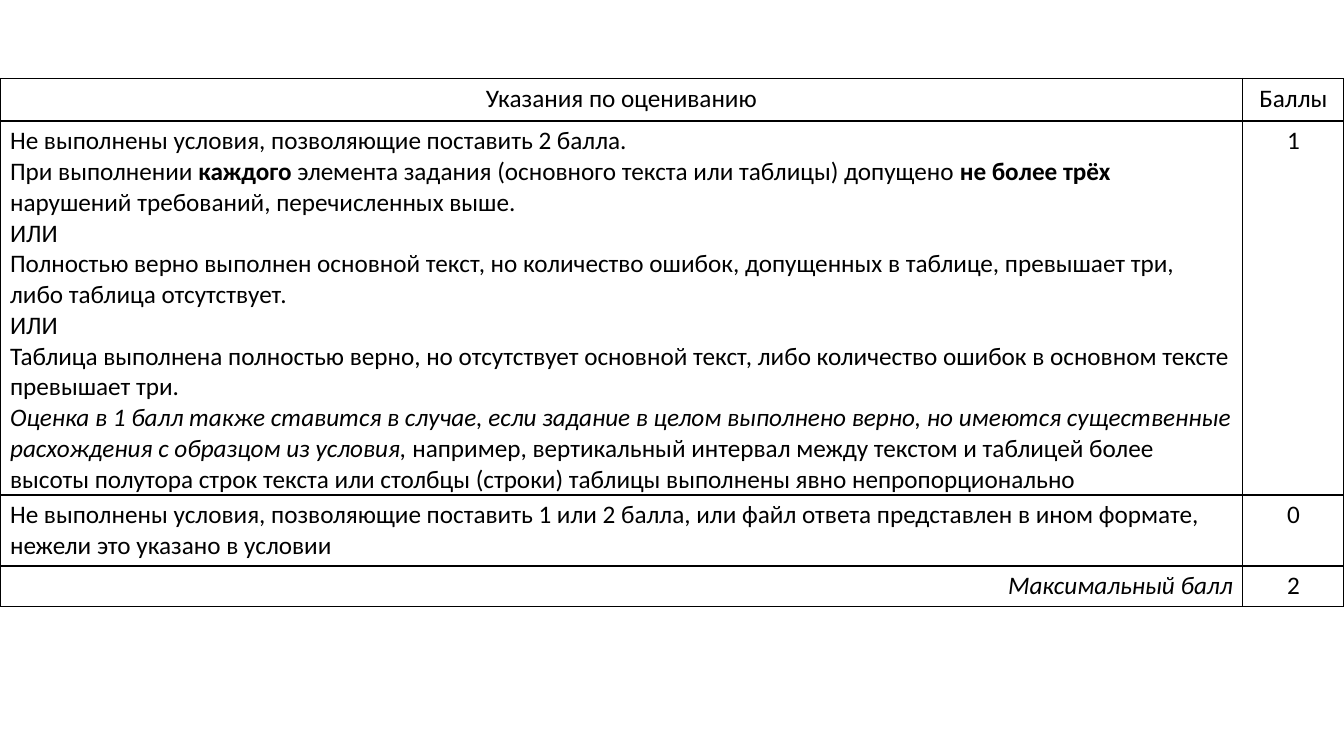
from lxml import etree
from pptx import Presentation
from pptx.dml.color import RGBColor
from pptx.enum.text import PP_ALIGN
from pptx.oxml.ns import qn
from pptx.util import Cm, Pt

LEFT, CENTER, RIGHT = PP_ALIGN.LEFT, PP_ALIGN.CENTER, PP_ALIGN.RIGHT
BLACK = "000000"


def color(value):
    return RGBColor.from_string(value)


def add_borders(cell):
    properties = cell._tc.get_or_add_tcPr()
    for position, side in enumerate(("a:lnL", "a:lnR", "a:lnT", "a:lnB")):
        line = etree.Element(qn(side), w=str(Pt(1)))
        fill = etree.SubElement(line, qn("a:solidFill"))
        etree.SubElement(fill, qn("a:srgbClr"), val=BLACK)
        properties.insert(position, line)


one_point = [
    [("Не выполнены условия, позволяющие поставить 2 балла.", "")],
    [
        ("При выполнении ", ""),
        ("каждого ", "bold"),
        ("элемента задания (основного текста или таблицы) допущено ", ""),
        ("не более трёх ", "bold"),
        ("нарушений требований, перечисленных выше.", ""),
    ],
    [("ИЛИ", "")],
    [("Полностью верно выполнен основной текст, но количество ошибок, "
      "допущенных в таблице, превышает три, либо таблица отсутствует.", "")],
    [("ИЛИ", "")],
    [("Таблица выполнена полностью верно, но отсутствует основной текст, "
      "либо количество ошибок в основном тексте превышает три.", "")],
    [
        ("Оценка в 1 балл также ставится в случае, если задание в целом "
         "выполнено верно, но имеются существенные расхождения с образцом "
         "из условия, ", "italic"),
        ("например, вертикальный интервал между текстом и таблицей более "
         "высоты полутора строк текста или столбцы (строки) таблицы "
         "выполнены явно непропорционально", ""),
    ],
]
zero_points = [
    [("Не выполнены условия, позволяющие поставить 1 или 2 балла, или файл "
      "ответа представлен в ином формате, нежели это указано в условии", "")],
]
criteria = [
    (1.07, CENTER, [[("Указания по оцениванию", "")]], "Баллы"),
    (9.4, LEFT, one_point, "1"),
    (1.77, LEFT, zero_points, "0"),
    (1, RIGHT, [[("Максимальный балл", "italic")]], "2"),
]

prs = Presentation()
prs.slide_width, prs.slide_height = Cm(33.87), Cm(19.05)
slide = prs.slides.add_slide(prs.slide_layouts[6])

table_height = sum(height for height, *_ in criteria)
scoring = slide.shapes.add_table(
    len(criteria), 2, Cm(0), Cm(1.98), Cm(33.87), Cm(table_height)
).table
scoring.columns[0].width, scoring.columns[1].width = Cm(31.32), Cm(2.55)
scoring.first_row = scoring.horz_banding = False

for row, (height, guidance_align, guidance, points) in enumerate(criteria):
    scoring.rows[row].height = Cm(height)
    contents = [(guidance_align, guidance), (CENTER, [[(points, "")]])]
    for column, (align, paragraphs) in enumerate(contents):
        cell = scoring.cell(row, column)
        cell.fill.background()
        add_borders(cell)
        cell.margin_top = Cm(0.12)
        cell.margin_bottom = Cm(0 if guidance is one_point else 0.12)
        frame = cell.text_frame
        for index, pieces in enumerate(paragraphs):
            paragraph = frame.add_paragraph() if index else frame.paragraphs[0]
            paragraph.alignment = align
            for text, style in pieces:
                run = paragraph.add_run()
                run.text = text
                run.font.name = "Calibri"
                run.font.size = Pt(18)
                run.font.color.rgb = color(BLACK)
                run.font.bold = style == "bold"
                run.font.italic = style == "italic"

prs.save("out.pptx")
